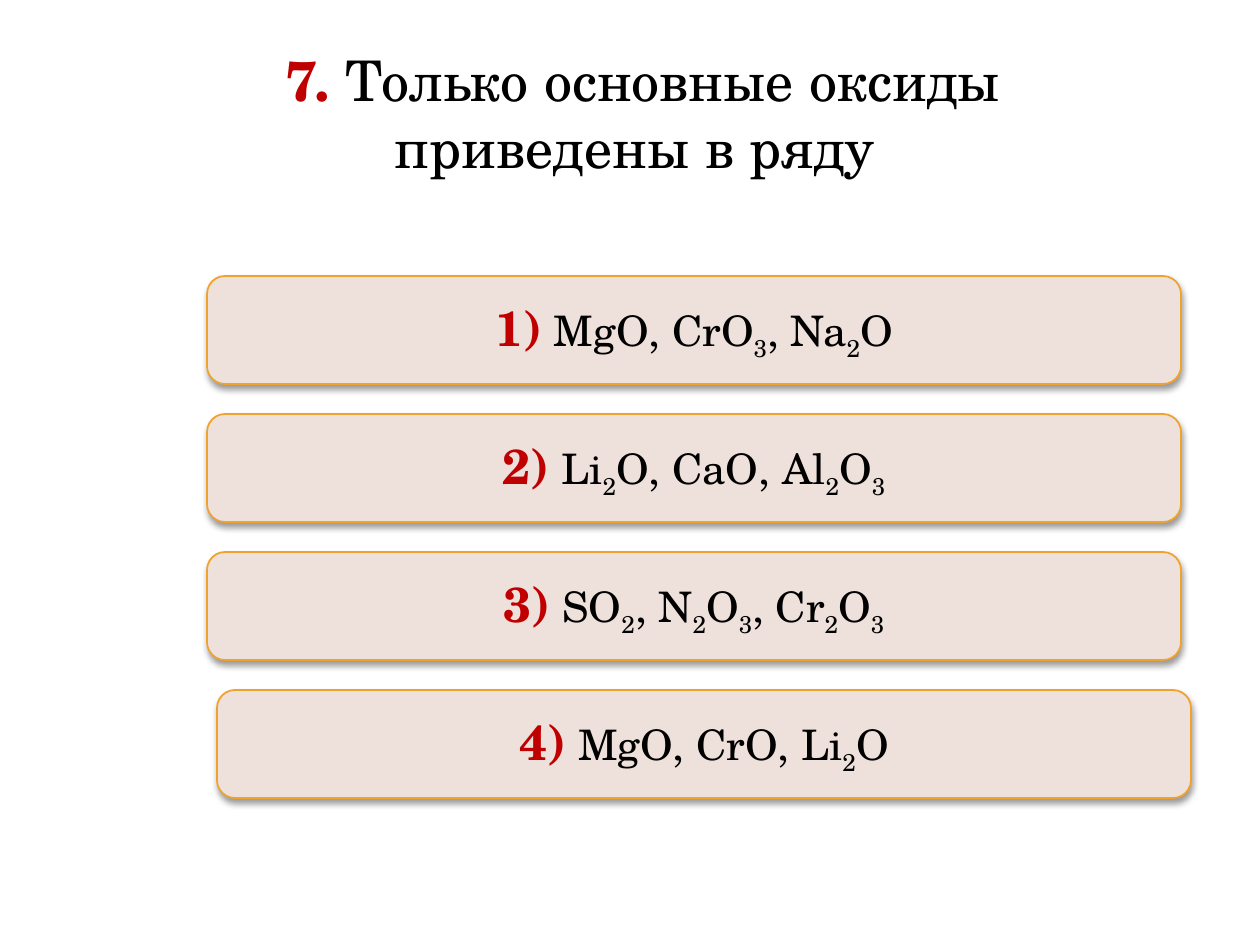
import itertools
from dataclasses import dataclass

import lxml.etree
import pptx
import pptx.dml.color
import pptx.enum.shapes
import pptx.enum.text
import pptx.oxml.ns
import pptx.util

EMU_PER_PX = 914400 / 126


@dataclass(frozen=True)
class Theme:
    font: str = "TeX Gyre Schola"
    accent: str = "C00000"
    ink: str = "000000"
    card_fill: str = "EEE0DB"
    card_line: str = "F0A22E"
    title_size: int = 32
    number_size: int = 28
    formula_size: int = 24


@dataclass(frozen=True)
class Answer:
    number: str
    formulas: str
    left: int = 207


THEME = Theme()
CARD_TOP, CARD_WIDTH, CARD_HEIGHT, CARD_PITCH = 276, 974, 108, 138
ANSWERS = [
    Answer("1)", "MgO, CrO3, Na2O"),
    Answer("2)", "Li2O, CaO, Al2O3"),
    Answer("3)", "SO2, N2O3, Cr2O3"),
    Answer("4)", "MgO, CrO, Li2O", left=217),
]


def px(length: int) -> pptx.util.Emu:
    return pptx.util.Emu(round(length * EMU_PER_PX))


def rgb(color: str) -> pptx.dml.color.RGBColor:
    return pptx.dml.color.RGBColor.from_string(color)


def format_run(run, size: int, color: str, bold: bool = False) -> None:
    run.font.name = THEME.font
    run.font.size = pptx.util.Pt(size)
    run.font.bold = bold
    run.font.color.rgb = rgb(color)


def add_run(paragraph, text: str, size: int, color: str, bold: bool = False):
    run = paragraph.add_run()
    run.text = text
    format_run(run, size, color, bold)
    return run


def add_shadow(shape) -> None:
    shape.shadow.inherit = False
    effects = shape._element.spPr.find(pptx.oxml.ns.qn("a:effectLst"))
    shadow = lxml.etree.SubElement(
        effects, pptx.oxml.ns.qn("a:outerShdw"),
        blurRad=str(pptx.util.Pt(4)), dist=str(pptx.util.Pt(2)),
        dir="5400000", rotWithShape="0")
    color = lxml.etree.SubElement(shadow, pptx.oxml.ns.qn("a:srgbClr"), val=THEME.ink)
    lxml.etree.SubElement(color, pptx.oxml.ns.qn("a:alpha"), val="40000")


def add_title(slide) -> None:
    shape = slide.shapes.add_textbox(px(137), px(39), px(1012), px(217))
    text_frame = shape.text_frame
    text_frame.word_wrap = True
    text_frame.auto_size = pptx.enum.text.MSO_AUTO_SIZE.SHAPE_TO_FIT_TEXT
    paragraph = text_frame.paragraphs[0]
    paragraph.alignment = pptx.enum.text.PP_ALIGN.CENTER
    add_run(paragraph, "7.", THEME.title_size, THEME.accent, bold=True)
    add_run(paragraph, " Только основные оксиды приведены в ряду ",
            THEME.title_size, THEME.ink)
    # The closing line break belongs to the title and sets its height
    paragraph.add_line_break()
    paragraph.font.size = pptx.util.Pt(THEME.title_size)


def add_answer(slide, answer: Answer, top: int) -> None:
    shape = slide.shapes.add_shape(
        pptx.enum.shapes.MSO_SHAPE.ROUNDED_RECTANGLE,
        px(answer.left), px(top), px(CARD_WIDTH), px(CARD_HEIGHT))
    shape.fill.solid()
    shape.fill.fore_color.rgb = rgb(THEME.card_fill)
    shape.line.color.rgb = rgb(THEME.card_line)
    shape.line.width = pptx.util.Pt(1)
    add_shadow(shape)

    text_frame = shape.text_frame
    text_frame.word_wrap = True
    text_frame.vertical_anchor = pptx.enum.text.MSO_ANCHOR.MIDDLE
    paragraph = text_frame.paragraphs[0]
    paragraph.alignment = pptx.enum.text.PP_ALIGN.CENTER
    add_run(paragraph, answer.number, THEME.number_size, THEME.accent, bold=True)
    add_run(paragraph, " ", THEME.formula_size, THEME.ink).font.italic = True

    # Digits in a formula are subscripts
    for is_index, characters in itertools.groupby(answer.formulas, str.isdigit):
        run = add_run(paragraph, "".join(characters), THEME.formula_size, THEME.ink)
        if is_index:
            run.font._element.set("baseline", "-25000")


def main() -> None:
    presentation = pptx.Presentation()
    presentation.slide_width = px(1260)
    presentation.slide_height = px(945)
    slide = presentation.slides.add_slide(presentation.slide_layouts[6])

    # Question
    add_title(slide)

    # Answer cards
    for index, answer in enumerate(ANSWERS):
        add_answer(slide, answer, CARD_TOP + index * CARD_PITCH)

    presentation.save("out.pptx")


if __name__ == "__main__":
    main()
